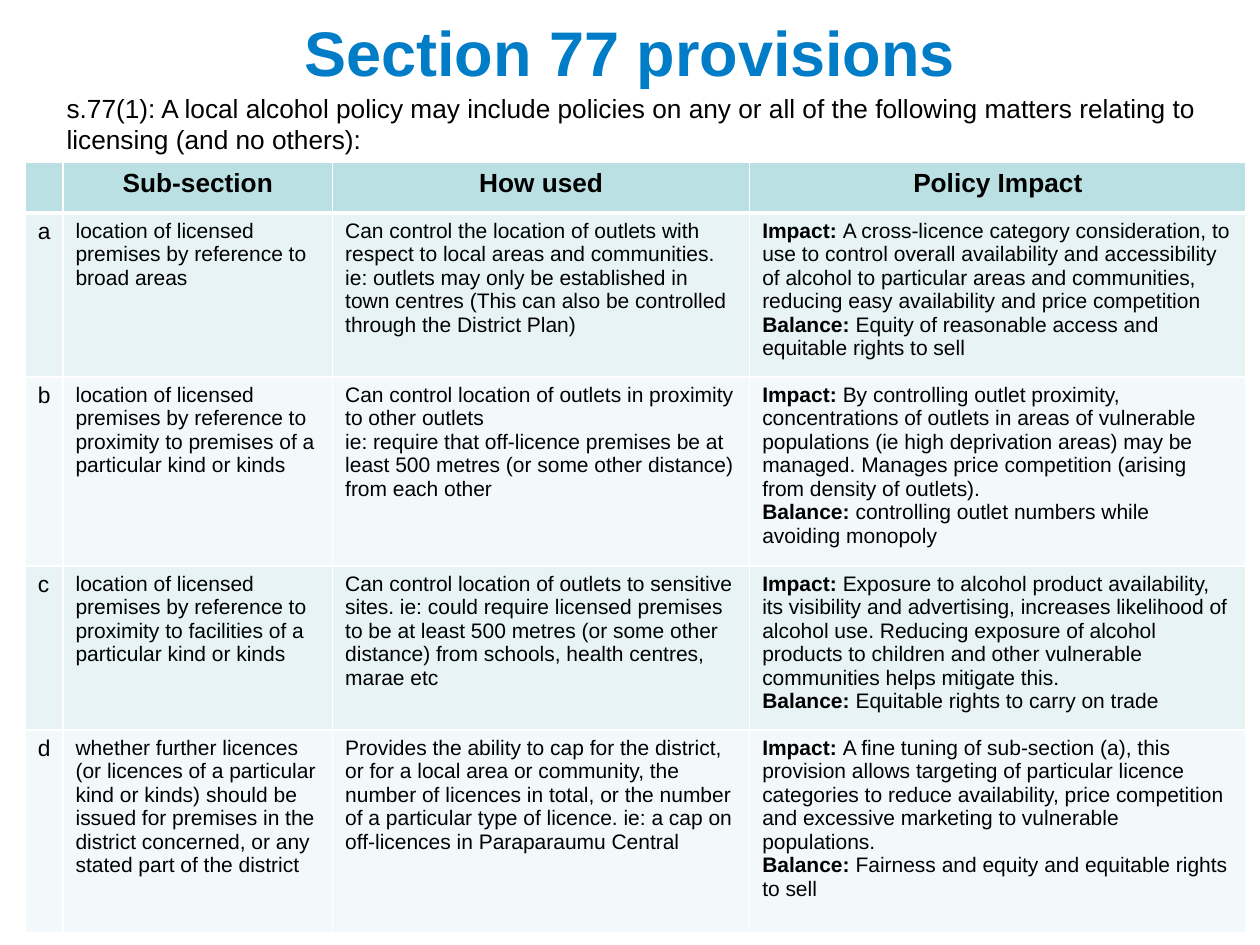
from lxml.etree import SubElement
from pptx import Presentation
from pptx.dml.color import RGBColor
from pptx.enum.text import MSO_ANCHOR, PP_ALIGN
from pptx.oxml.ns import qn
from pptx.util import Inches, Pt

FONT = "Arial"
COLORS = {
    "title": "007DC6",
    "text": "000000",
    "head": "BBE0E3",
    "odd": "E7F3F4",
    "even": "F3F9FA",
    "line": "FFFFFF",
}
COLS = [0.3, 2.14, 3.31, 3.94]
ROWS = [0.39, 1.3, 1.5, 1.3, 1.61]
HEADS = ["", "Sub-section", "How used", "Policy Impact"]
ITEMS = [
    ("a",
     "location of licensed premises by reference to broad areas",
     ["Can control the location of outlets with respect to local areas and communities. "
      "ie: outlets may only be established in town centres "
      "(This can also be controlled through the District Plan)"],
     "A cross-licence category consideration, to use to control overall availability and "
     "accessibility of alcohol to particular areas and communities, reducing easy "
     "availability and price competition",
     "Equity of reasonable access and equitable rights to sell"),
    ("b",
     "location of licensed premises by reference to proximity to premises of a "
     "particular kind or kinds",
     ["Can control location of outlets in proximity to other outlets",
      "ie: require that off-licence premises be at least 500 metres "
      "(or some other distance) from each other"],
     "By controlling outlet proximity, concentrations of outlets in areas of vulnerable "
     "populations (ie high deprivation areas) may be managed. Manages price competition "
     "(arising from density of outlets).",
     "controlling outlet numbers while avoiding monopoly"),
    ("c",
     "location of licensed premises by reference to proximity to facilities of a "
     "particular kind or kinds",
     ["Can control location of outlets to sensitive sites. ie: could require licensed "
      "premises to be at least 500 metres (or some other distance) from schools, "
      "health centres, marae etc"],
     "Exposure to alcohol product availability, its visibility and advertising, increases "
     "likelihood of alcohol use. Reducing exposure of alcohol products to children and "
     "other vulnerable communities helps mitigate this.",
     "Equitable rights to carry on trade"),
    ("d",
     "whether further licences (or licences of a particular kind or kinds) should be "
     "issued for premises in the district concerned, or any stated part of the district",
     ["Provides the ability to cap for the district, or for a local area or community, "
      "the number of licences in total, or the number of a particular type of licence. "
      "ie: a cap on off-licences in Paraparaumu Central"],
     "A fine tuning of sub-section (a), this provision allows targeting of particular "
     "licence categories to reduce availability, price competition and excessive "
     "marketing to vulnerable populations.",
     "Fairness and equity and equitable rights to sell"),
]


def color(name):
    return RGBColor.from_string(COLORS[name])


def write(frame, paras, size, tint="text", align=PP_ALIGN.LEFT):
    for index, runs in enumerate(paras):
        para = frame.add_paragraph() if index else frame.paragraphs[0]
        para.alignment = align
        for text, bold in runs:
            run = para.add_run()
            run.text = text
            run.font.name = FONT
            run.font.size = Pt(size)
            run.font.bold = bold
            run.font.color.rgb = color(tint)


def paint(cell, fill, base):
    props = cell._tc.get_or_add_tcPr()
    for side, width in (("lnL", 1), ("lnR", 1), ("lnT", 1), ("lnB", base)):
        line = SubElement(props, qn(f"a:{side}"), w=str(Pt(width)))
        solid = SubElement(line, qn("a:solidFill"))
        SubElement(solid, qn("a:srgbClr"), val=COLORS["line"])
    cell.fill.solid()
    cell.fill.fore_color.rgb = color(fill)


def add_title(slide, box):
    title = slide.shapes.title
    title.left, title.top, title.width, title.height = map(Inches, box)
    title.text_frame.vertical_anchor = MSO_ANCHOR.MIDDLE
    write(title.text_frame, [[("Section 77 provisions", True)]], 36, "title",
          PP_ALIGN.CENTER)


def add_intro(slide, box):
    frame = slide.shapes.add_textbox(*map(Inches, box)).text_frame
    frame.word_wrap = True
    text = ("s.77(1): A local alcohol policy may include policies on any or all of the "
            "following matters relating to licensing (and no others):")
    write(frame, [[(text, False)]], 15)


def add_grid(slide, box):
    table = slide.shapes.add_table(len(ROWS), len(COLS), *map(Inches, box)).table
    for col, width in zip(table.columns, COLS):
        col.width = Inches(width)
    for row, height in zip(table.rows, ROWS):
        row.height = Inches(height)
    for cell, head in zip(table.rows[0].cells, HEADS):
        paint(cell, "head", 3)
        if head:
            write(cell.text_frame, [[(head, True)]], 15, align=PP_ALIGN.CENTER)
    for index, (mark, part, used, impact, balance) in enumerate(ITEMS, 1):
        texts = [
            [[(mark, False)]],
            [[(part, False)]],
            [[(line, False)] for line in used],
            [[("Impact: ", True), (impact, False)],
             [("Balance: ", True), (balance, False)]],
        ]
        for col, paras in enumerate(texts):
            cell = table.cell(index, col)
            paint(cell, "odd" if index % 2 else "even", 1)
            write(cell.text_frame, paras, 12 if col else 13)


def main():
    deck = Presentation()
    deck.slide_width, deck.slide_height = Inches(10), Inches(7.5)
    slide = deck.slides.add_slide(deck.slide_layouts[5])
    add_title(slide, (0.5, 0.13, 9, 0.55))
    add_intro(slide, (0.43, 0.68, 9.21, 0.61))
    add_grid(slide, (0.2, 1.29, sum(COLS), sum(ROWS)))
    deck.save("out.pptx")


if __name__ == "__main__":
    main()
